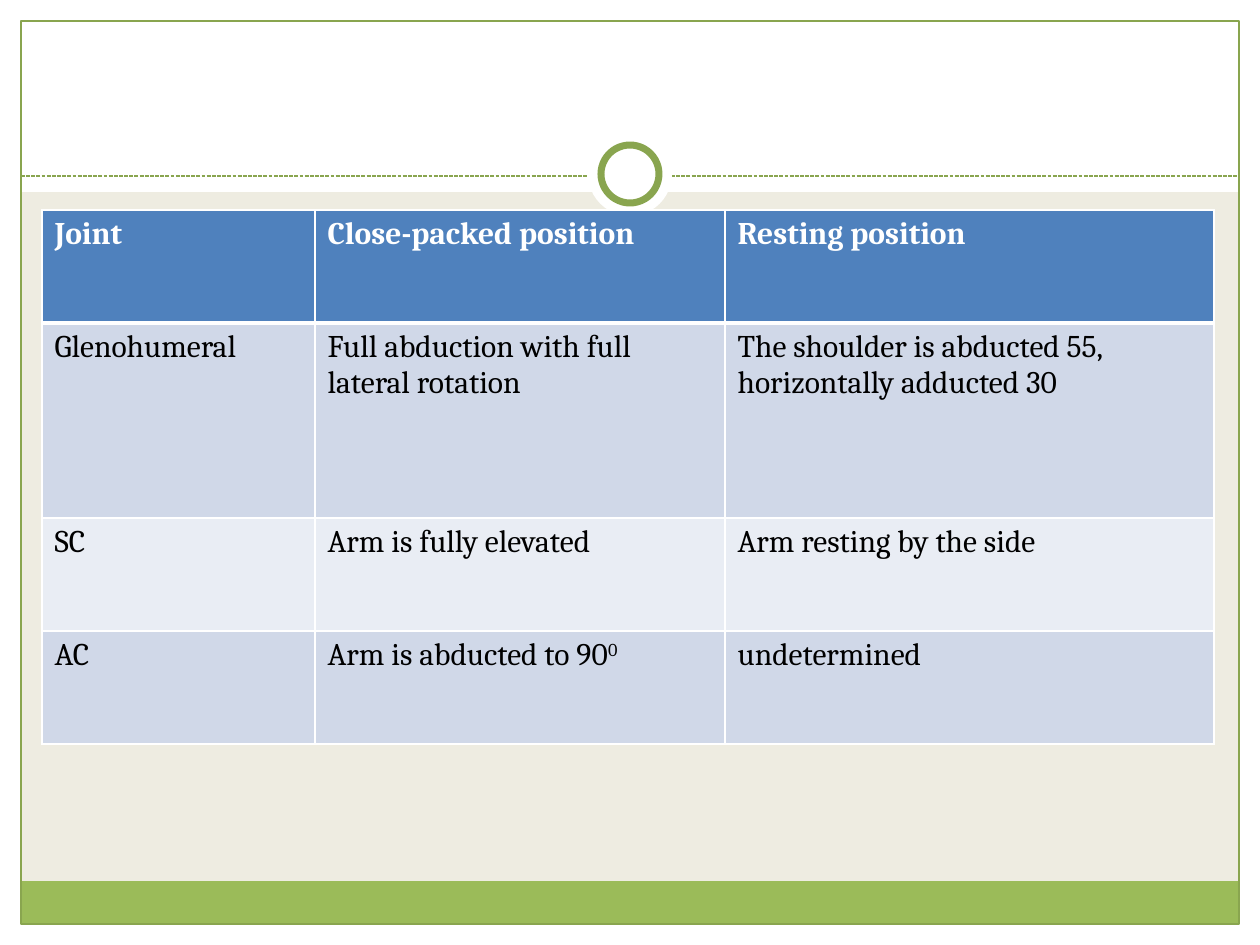
"""Build a slide with a table of shoulder joint positions."""
from lxml import etree
from pptx import Presentation
from pptx.dml.color import RGBColor
from pptx.enum.dml import MSO_LINE
from pptx.enum.shapes import MSO_CONNECTOR, MSO_SHAPE
from pptx.oxml.ns import qn
from pptx.util import Pt

RECTANGLE, OVAL = MSO_SHAPE.RECTANGLE, MSO_SHAPE.OVAL
STRAIGHT = MSO_CONNECTOR.STRAIGHT
DASH = MSO_LINE.SQUARE_DOT
SCALE = 914400 / 126
WIDTH, HEIGHT = 1260, 945
FONT = "Cambria"
COLORS = {
    "beige": "EEECE1", "white": "FFFFFF", "black": "000000",
    "green": "9BBB59", "outline": "89A54F",
    "header": "4F81BD", "odd": "D0D8E8", "even": "E9EDF4",
}

ROWS = [
    ("Joint", "Close-packed position", "Resting position"),
    ("Glenohumeral", "Full abduction with full lateral rotation",
     "The shoulder is abducted 55, horizontally adducted 30"),
    ("SC", "Arm is fully elevated", "Arm resting by the side"),
    ("AC", ("Arm is abducted to 90", "0"), "undetermined"),
]
TABLE_LEFT, TABLE_TOP = 42, 210
COLUMN_WIDTHS = [273, 410, 489]
ROW_HEIGHTS = [113, 195, 113, 113]

MARGIN = 21
DIVIDER_Y = 176
CIRCLE_Y = 174
FRAME = (MARGIN, MARGIN, WIDTH - 2 * MARGIN, HEIGHT - 2 * MARGIN)
PANELS = [
    (0, HEIGHT - MARGIN, WIDTH, MARGIN, "white"),
    (0, 0, WIDTH, 192, "white"),
    (0, 0, MARGIN, HEIGHT, "white"),
    (WIDTH - MARGIN, 0, MARGIN, HEIGHT, "white"),
    (MARGIN, 881, WIDTH - 2 * MARGIN, 43, "green"),
]
CIRCLES = [(84, None, 0), (58, "outline", 4)]


def px(value):
    return round(value * SCALE)


def rgb(name):
    return RGBColor.from_string(COLORS[name])


def add_panel(slide, kind, box, fill=None, line=None, weight=0):
    shape = slide.shapes.add_shape(kind, *map(px, box))
    shape.shadow.inherit = False
    if fill:
        shape.fill.solid()
        shape.fill.fore_color.rgb = rgb(fill)
    else:
        shape.fill.background()
    if line:
        shape.line.color.rgb = rgb(line)
        shape.line.width = Pt(weight)
    else:
        shape.line.fill.background()


def add_divider(slide):
    line = slide.shapes.add_connector(
        STRAIGHT, px(MARGIN), px(DIVIDER_Y), px(WIDTH - MARGIN), px(DIVIDER_Y))
    line.line.color.rgb = rgb("outline")
    line.line.width = Pt(0.75)
    line.line.dash_style = DASH
    etree.SubElement(line._element.spPr, qn("a:effectLst"))


def write_text(paragraph, text, color="black", bold=False, size=18, raised=False):
    run = paragraph.add_run()
    run.text = text
    run.font.name = FONT
    run.font.size = Pt(size)
    run.font.bold = bold
    run.font.color.rgb = rgb(color)
    if raised:
        run._r.get_or_add_rPr().set("baseline", "30000")


def set_borders(cell, **weights):
    properties = cell._tc.get_or_add_tcPr()
    for side, weight in weights.items():
        line = etree.SubElement(properties, qn(f"a:ln{side}"), w=str(Pt(weight)))
        fill = etree.SubElement(line, qn("a:solidFill"))
        etree.SubElement(fill, qn("a:srgbClr"), val=COLORS["white"])


def add_joint_table(slide):
    table = slide.shapes.add_table(
        len(ROWS), len(COLUMN_WIDTHS), px(TABLE_LEFT), px(TABLE_TOP),
        px(sum(COLUMN_WIDTHS)), px(sum(ROW_HEIGHTS))).table
    for column, width in zip(table.columns, COLUMN_WIDTHS):
        column.width = px(width)
    for index, (row, height, texts) in enumerate(zip(table.rows, ROW_HEIGHTS, ROWS)):
        row.height = px(height)
        header = index == 0
        fill = "header" if header else ("even", "odd")[index % 2]
        for cell, text in zip(row.cells, texts):
            set_borders(cell, L=1, R=1, T=3 if index == 1 else 1, B=3 if header else 1)
            cell.fill.solid()
            cell.fill.fore_color.rgb = rgb(fill)
            parts = (text,) if isinstance(text, str) else text
            for position, part in enumerate(parts):
                write_text(cell.text_frame.paragraphs[0], part, bold=header,
                           color="white" if header else "black", raised=position > 0)


def main():
    presentation = Presentation()
    presentation.slide_width, presentation.slide_height = px(WIDTH), px(HEIGHT)
    slide = presentation.slides.add_slide(presentation.slide_layouts[6])
    slide.background.fill.solid()
    slide.background.fill.fore_color.rgb = rgb("beige")
    for *box, fill in PANELS:
        add_panel(slide, RECTANGLE, box, fill=fill)
    add_panel(slide, RECTANGLE, FRAME, line="outline", weight=0.75)
    add_divider(slide)
    for size, line, weight in CIRCLES:
        box = ((WIDTH - size) / 2, CIRCLE_Y - size / 2, size, size)
        add_panel(slide, OVAL, box, fill="white", line=line, weight=weight)
    add_joint_table(slide)
    presentation.save("out.pptx")


if __name__ == "__main__":
    main()
